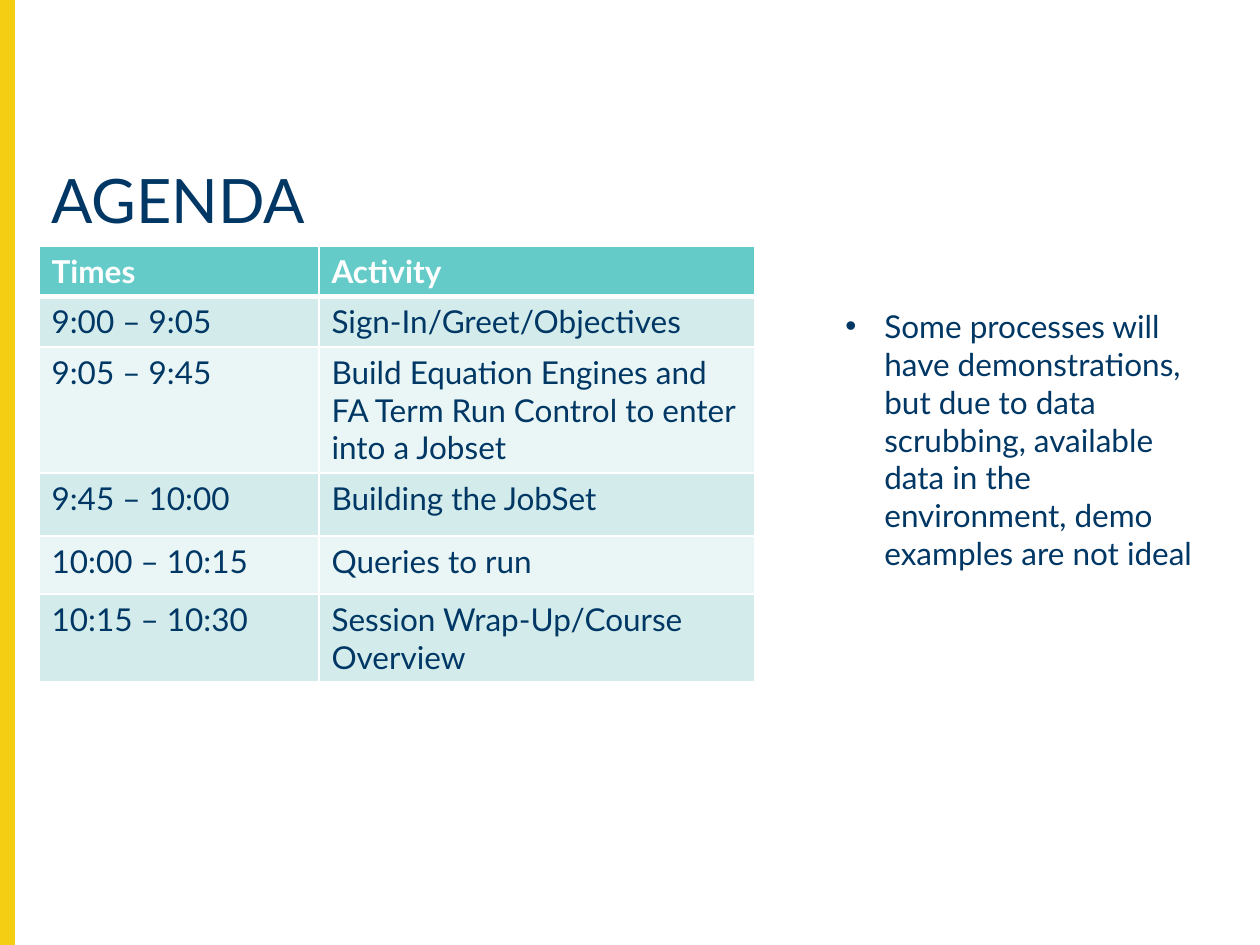
import dataclasses

import lxml.etree
import pptx
import pptx.dml.color
import pptx.enum.shapes
import pptx.enum.text
import pptx.oxml.ns
import pptx.util

PX = 914400 // 126


@dataclasses.dataclass(frozen=True)
class Theme:
    font: str = "Lato"
    navy: str = "003764"
    white: str = "FFFFFF"
    yellow: str = "F4CE12"
    teal: str = "65CBC9"
    bands: tuple = ("D3ECEB", "EAF6F5")
    title_size: int = 35
    body_size: int = 18


THEME = Theme()

AGENDA = [
    ("Times", "Activity"),
    ("9:00 – 9:05", "Sign-In/Greet/Objectives"),
    ("9:05 – 9:45", "Build Equation Engines and FA Term Run Control to enter into a Jobset"),
    ("9:45 – 10:00", "Building the JobSet"),
    ("10:00 – 10:15", "Queries to run"),
    ("10:15 – 10:30", "Session Wrap-Up/Course Overview"),
]
COLUMN_WIDTHS = (280, 436)
ROW_HEIGHTS = (47, 47, 47, 63, 58, 47)
DEMO_NOTE = (
    "Some processes will have demonstrations, but due to data scrubbing, "
    "available data in the environment, demo examples are not ideal"
)


def px(*lengths):
    return [pptx.util.Emu(length * PX) for length in lengths]


def rgb(color):
    return pptx.dml.color.RGBColor.from_string(color)


def write(paragraph, text, color=THEME.navy, size=THEME.body_size, bold=False):
    run = paragraph.add_run()
    run.text = text
    formats = {"name": THEME.font, "size": pptx.util.Pt(size), "bold": bold}
    for attribute, value in formats.items():
        setattr(run.font, attribute, value)
    run.font.color.rgb = rgb(color)


def add_side_bar(slide, box):
    bar = slide.shapes.add_shape(pptx.enum.shapes.MSO_SHAPE.RECTANGLE, *px(*box))
    bar.shadow.inherit = False
    bar.fill.solid()
    bar.fill.fore_color.rgb = rgb(THEME.yellow)
    bar.line.color.rgb = rgb(THEME.yellow)
    bar.line.width = pptx.util.Pt(1)


def add_text(slide, box, text, size=THEME.body_size):
    """Add a wrapped, top-anchored text box and return its paragraph."""
    frame = slide.shapes.add_textbox(*px(*box)).text_frame
    formats = {"word_wrap": True, "vertical_anchor": pptx.enum.text.MSO_ANCHOR.TOP}
    for attribute, value in formats.items():
        setattr(frame, attribute, value)
    paragraph = frame.paragraphs[0]
    write(paragraph, text, size=size)
    return paragraph


def add_bullet(paragraph, indent):
    properties = paragraph._p.get_or_add_pPr()
    (hanging,) = px(indent)
    properties.set("marL", str(hanging))
    properties.set("indent", str(-hanging))
    qn = pptx.oxml.ns.qn
    lxml.etree.SubElement(properties, qn("a:buFont"), typeface="Arial")
    lxml.etree.SubElement(properties, qn("a:buChar"), char="•")


def set_borders(cell, widths):
    """Draw white borders; widths maps each side (L, R, T, B) to points."""
    qn = pptx.oxml.ns.qn
    properties = cell._tc.get_or_add_tcPr()
    for position, (side, width) in enumerate(widths.items()):
        border = lxml.etree.Element(qn(f"a:ln{side}"), w=str(pptx.util.Pt(width)))
        fill = lxml.etree.SubElement(border, qn("a:solidFill"))
        lxml.etree.SubElement(fill, qn("a:srgbClr"), val=THEME.white)
        properties.insert(position, border)


def add_agenda(slide, left, top):
    size = (sum(COLUMN_WIDTHS), sum(ROW_HEIGHTS))
    table = slide.shapes.add_table(
        len(AGENDA), len(COLUMN_WIDTHS), *px(left, top, *size)
    ).table
    for column, width in zip(table.columns, px(*COLUMN_WIDTHS)):
        column.width = width
    for row, height in zip(table.rows, px(*ROW_HEIGHTS)):
        row.height = height

    for index, entries in enumerate(AGENDA):
        header = index == 0
        band = THEME.teal if header else THEME.bands[(index - 1) % 2]
        color = THEME.white if header else THEME.navy
        top_width = 3 if index == 1 else 1
        bottom_width = 3 if header else 1
        for column, text in enumerate(entries):
            cell = table.cell(index, column)
            cell.fill.solid()
            cell.fill.fore_color.rgb = rgb(band)
            set_borders(cell, {"L": 1, "R": 1, "T": top_width, "B": bottom_width})
            write(cell.text_frame.paragraphs[0], text, color, bold=header)


def main():
    presentation = pptx.Presentation()
    presentation.slide_width, presentation.slide_height = px(1260, 945)
    slide = presentation.slides.add_slide(presentation.slide_layouts[6])

    add_side_bar(slide, (0, 0, 14, 945))
    title = add_text(slide, (39, 164, 1176, 100), "AGENDA", THEME.title_size)
    title.line_spacing = 0.9
    add_agenda(slide, 39, 246)
    note = add_text(slide, (833, 301, 383, 280), DEMO_NOTE)
    add_bullet(note, 39)

    presentation.save("out.pptx")


if __name__ == "__main__":
    main()
